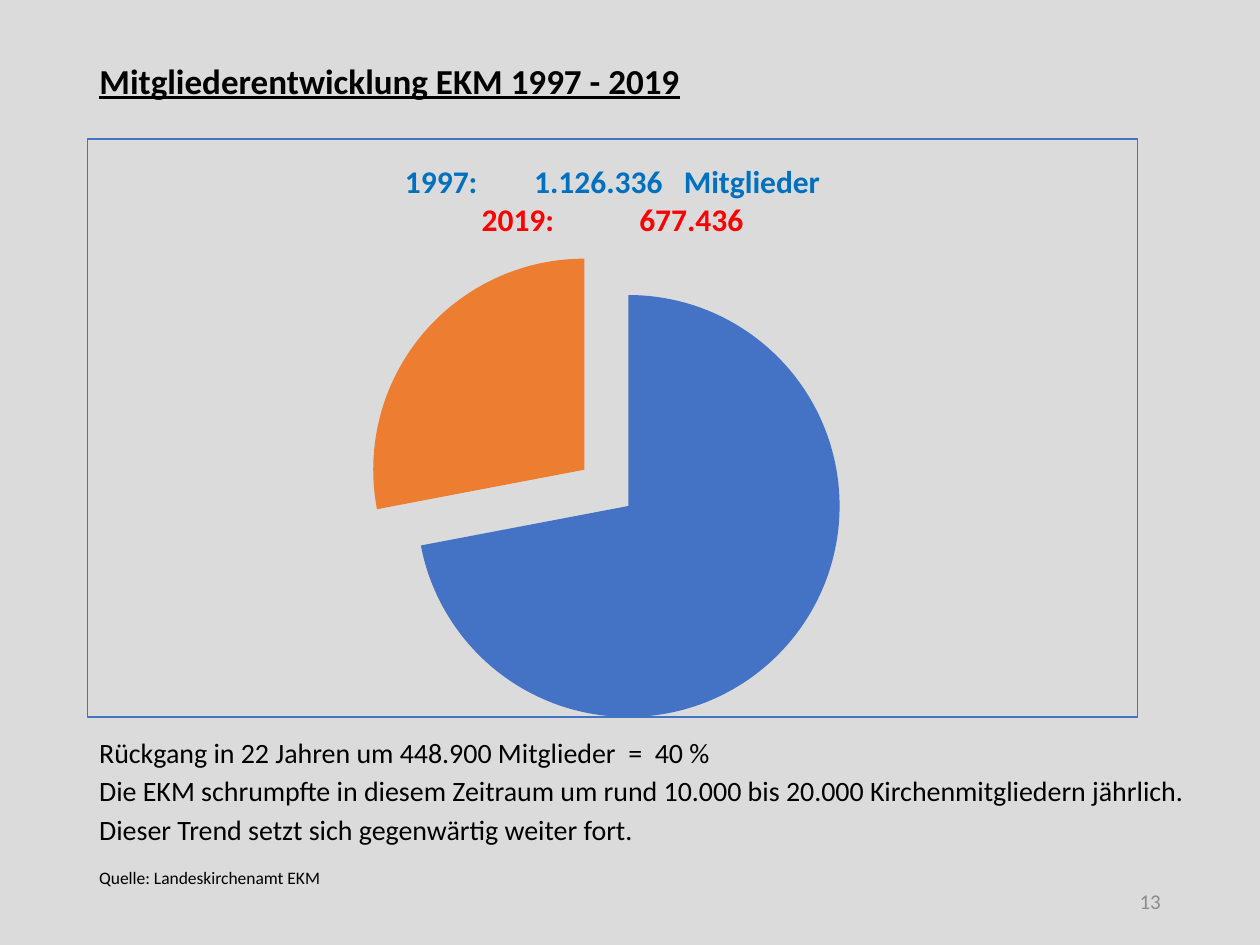
"""Build the slide on the membership development of the EKM from 1997 to 2019."""
from lxml.etree import SubElement
from pptx import Presentation
from pptx.chart.data import CategoryChartData
from pptx.dml.color import RGBColor
from pptx.enum.chart import XL_CHART_TYPE
from pptx.enum.text import MSO_ANCHOR, PP_ALIGN
from pptx.oxml import parse_xml
from pptx.oxml.ns import nsdecls, qn
from pptx.util import Cm, Pt


def color(value):
    """Turn a hex string into a colour."""
    return RGBColor.from_string(value)


def add_run(paragraph, text, size, hex_color="000000", bold=False):
    """Append a formatted run and return it."""
    run = paragraph.add_run()
    run.text = text
    run.font.name = "Calibri"
    run.font.size = Pt(size)
    run.font.bold = bold
    run.font.color.rgb = color(hex_color)
    return run


presentation = Presentation()
presentation.slide_width = Cm(25.4)
presentation.slide_height = Cm(19.05)
slide = presentation.slides.add_slide(presentation.slide_layouts[5])
slide.background.fill.solid()
slide.background.fill.fore_color.rgb = color("DBDBDB")

title = slide.shapes.title
title.left, title.top, title.width, title.height = Cm(1.75), Cm(1.02), Cm(21.9), Cm(1.3)
title.text_frame.vertical_anchor = MSO_ANCHOR.MIDDLE
paragraph = title.text_frame.paragraphs[0]
paragraph.alignment = PP_ALIGN.LEFT
paragraph.line_spacing = 0.9
add_run(paragraph, "Mitgliederentwicklung EKM 1997 - 2019", 20, bold=True).font.underline = True

chart_data = CategoryChartData()
chart_data.categories = ["1", "2"]
chart_data.add_series("Series 1", (72, 28))
chart = slide.shapes.add_chart(
    XL_CHART_TYPE.PIE, Cm(1.75), Cm(2.79), Cm(21.2), Cm(11.68), chart_data
).chart
chart.has_legend = False
chart.font.name = "Calibri"
chart.font.size = Pt(10)
chart.font.color.rgb = color("000000")

chart.has_title = True
chart_title = chart.chart_title.text_frame
title_lines = [
    ("1997:        1.126.336   Mitglieder", "0070C0"),
    ("2019:            677.436", "FF0000"),
]
for index, (text, hex_color) in enumerate(title_lines):
    paragraph = chart_title.add_paragraph() if index else chart_title.paragraphs[0]
    add_run(paragraph, text, 18, hex_color, bold=True)

plot = chart.plots[0]
plot.vary_by_categories = True
series = plot.series[0]
for index, hex_color in enumerate(["4472C4", "ED7D31"]):
    point = series.points[index]
    point.format.fill.solid()
    point.format.fill.fore_color.rgb = color(hex_color)
    point.format.line.fill.background()
exploded_point = series._element.findall(qn("c:dPt"))[1]
explosion = exploded_point.makeelement(qn("c:explosion"), {"val": "27"})
exploded_point.find(qn("c:spPr")).addprevious(explosion)

plot_area = chart._chartSpace.chart.plotArea
for old_layout in plot_area.findall(qn("c:layout")):
    plot_area.remove(old_layout)
layout = plot_area.makeelement(qn("c:layout"), {})
plot_area.insert(0, layout)
manual_layout = SubElement(layout, qn("c:manualLayout"))
for name, value in [
    ("layoutTarget", "inner"), ("xMode", "edge"), ("yMode", "edge"),
    ("x", "0.31"), ("y", "0.27"), ("w", "0.41"), ("h", "0.73"),
]:
    SubElement(manual_layout, qn(f"c:{name}"), val=value)

border = parse_xml(
    f'<c:spPr {nsdecls("c", "a")}><a:noFill/><a:ln w="9525"><a:solidFill>'
    '<a:srgbClr val="4472C4"/></a:solidFill></a:ln></c:spPr>'
)
chart._chartSpace.chart.addnext(border)

summary = slide.shapes.add_textbox(Cm(1.75), Cm(14.6), Cm(23.24), Cm(3.56)).text_frame
summary.word_wrap = True
summary_lines = [
    "Rückgang in 22 Jahren um 448.900 Mitglieder  =  40 %",
    "Die EKM schrumpfte in diesem Zeitraum um rund 10.000 bis 20.000 Kirchenmitgliedern jährlich.",
    "Dieser Trend setzt sich gegenwärtig weiter fort.",
]
paragraph = summary.paragraphs[0]
for index, text in enumerate(summary_lines):
    if index:
        paragraph.add_line_break()
    add_run(paragraph, text, 16)
add_run(summary.add_paragraph(), "Quelle: Landeskirchenamt EKM", 10)
for paragraph in summary.paragraphs:
    paragraph.line_spacing = 1.15
    paragraph.space_after = Pt(10)

page_number = slide.shapes.add_textbox(Cm(17.93), Cm(17.65), Cm(5.72), Cm(1.02)).text_frame
page_number.word_wrap = True
page_number.vertical_anchor = MSO_ANCHOR.MIDDLE
paragraph = page_number.paragraphs[0]
paragraph.alignment = PP_ALIGN.RIGHT
add_run(paragraph, "13", 12, "8C8C8C")

presentation.save("out.pptx")
